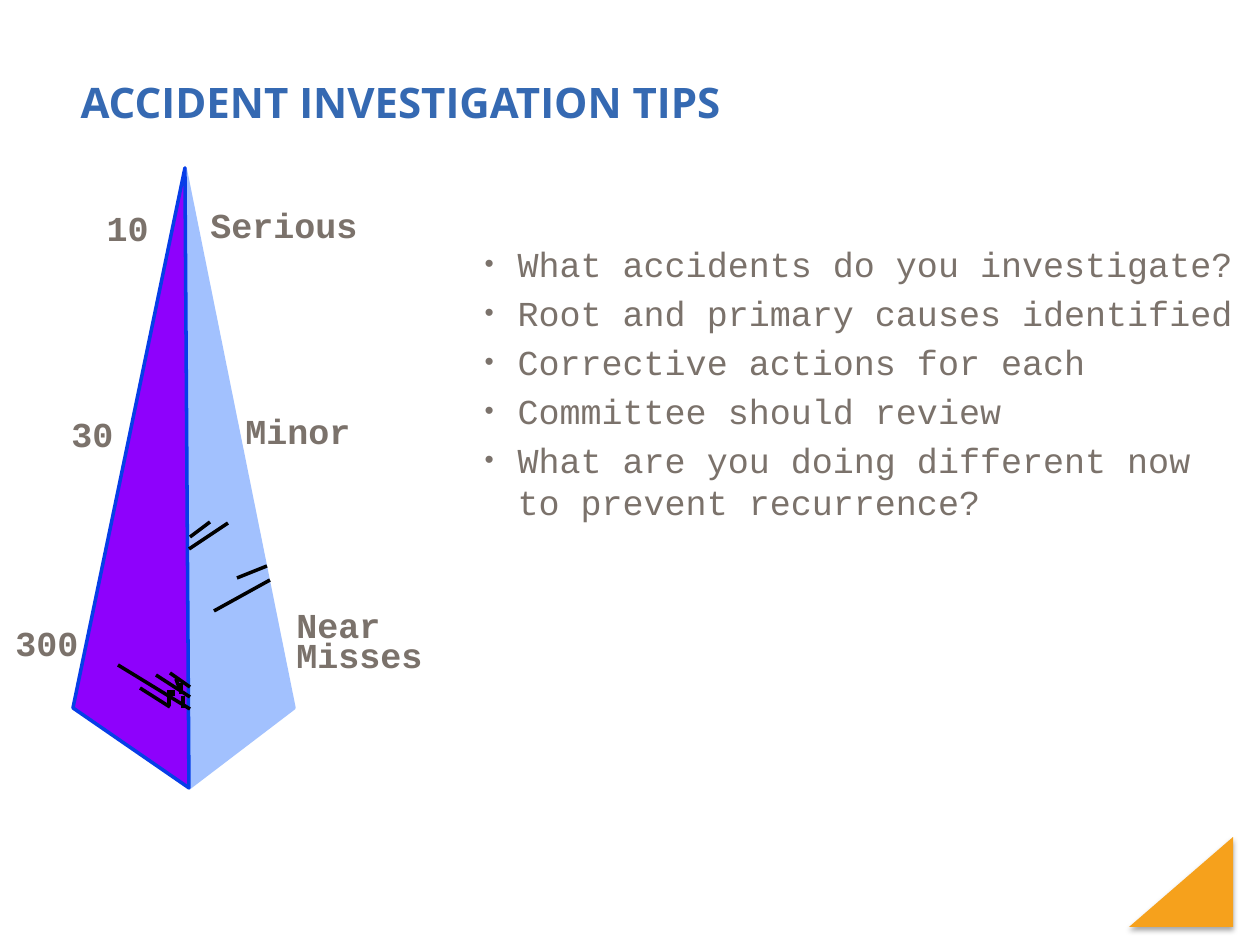
"""Build the accident investigation tips slide with its incident pyramid."""
from dataclasses import dataclass

from lxml import etree
from pptx import Presentation
from pptx.dml.color import RGBColor
from pptx.enum.shapes import MSO_CONNECTOR, MSO_SHAPE
from pptx.enum.text import MSO_ANCHOR, MSO_AUTO_SIZE, PP_ALIGN
from pptx.oxml.ns import qn
from pptx.util import Emu, Pt

EMU_PER_PX = 914400 / 126
BLUE = RGBColor(0x35, 0x69, 0xB2)
GRAY = RGBColor(0x7B, 0x72, 0x6B)
ORANGE = RGBColor(0xF6, 0xA1, 0x1C)
LIGHT_BLUE = RGBColor(0xA2, 0xC1, 0xFE)
PURPLE = RGBColor(0x8E, 0x01, 0xFC)
EDGE_BLUE = RGBColor(0x06, 0x3D, 0xE8)
BLACK = RGBColor(0, 0, 0)
LEFT, CENTER = PP_ALIGN.LEFT, PP_ALIGN.CENTER
TOP, MIDDLE = MSO_ANCHOR.TOP, MSO_ANCHOR.MIDDLE
NO_AUTOFIT = MSO_AUTO_SIZE.NONE
STRAIGHT = MSO_CONNECTOR.STRAIGHT
RIGHT_TRIANGLE = MSO_SHAPE.RIGHT_TRIANGLE
BULLET_INDENT = 33


@dataclass
class Label:
    text: str
    box: tuple[int, int, int, int]
    align: PP_ALIGN = LEFT
    wrap: bool = True
    line_spacing: float = 1.0


@dataclass
class Face:
    points: list[tuple[int, int]]
    fill: RGBColor
    outline: RGBColor


@dataclass
class Stroke:
    start: tuple[int, int]
    end: tuple[int, int]


APEX, BASE = (185, 168), (189, 788)
FACES = [
    Face([APEX, (294, 708), BASE], LIGHT_BLUE, LIGHT_BLUE),
    Face([APEX, BASE, (73, 708)], PURPLE, EDGE_BLUE),
]
STROKES = [
    Stroke((190, 709), (118, 665)),
    Stroke((190, 697), (156, 675)),
    Stroke((190, 687), (170, 673)),
    Stroke((180, 690), (176, 679)),
    Stroke((181, 694), (181, 683)),
    Stroke((183, 696), (183, 708)),
    Stroke((173, 690), (173, 696)),
    Stroke((169, 690), (169, 706)),
    Stroke((170, 707), (140, 688)),
    Stroke((189, 549), (228, 523)),
    Stroke((190, 537), (210, 522)),
    Stroke((267, 566), (237, 578)),
    Stroke((270, 580), (214, 611)),
]
LABELS = [
    Label("Serious", (198, 205, 253, 82), line_spacing=0.8),
    Label("Minor", (233, 413, 233, 78), line_spacing=0.75),
    Label("Near\nMisses", (284, 609, 241, 74), line_spacing=0.7),
    Label("10", (93, 200, 69, 54), CENTER, False),
    Label("30", (58, 406, 69, 54), CENTER, False),
    Label("300", (1, 615, 92, 54), CENTER, False),
]
TIPS = "\n".join([
    "What accidents do you investigate?",
    "Root and primary causes identified",
    "Corrective actions for each",
    "Committee should review",
    "What are you doing different now to prevent recurrence?",
])


def px(length: float) -> Emu:
    return Emu(round(length * EMU_PER_PX))


def place(shape, box: tuple[int, int, int, int]) -> None:
    shape.left, shape.top, shape.width, shape.height = map(px, box)


def add_bullet(paragraph) -> None:
    properties = paragraph._p.get_or_add_pPr()
    properties.set("marL", str(px(BULLET_INDENT)))
    properties.set("indent", str(-px(BULLET_INDENT)))
    color = etree.SubElement(properties, qn("a:buClr"))
    etree.SubElement(color, qn("a:srgbClr"), val=str(GRAY))
    etree.SubElement(properties, qn("a:buSzPct"), val="75000")
    etree.SubElement(properties, qn("a:buChar"), char="•")


def write_text(shape, text: str, *, size: int = 20, font: str = "Courier New",
               color: RGBColor = GRAY, bold: bool = False, align: PP_ALIGN = LEFT,
               anchor: MSO_ANCHOR = TOP, wrap: bool = True, line_spacing: float = 1.0,
               space_before: int = 0, bullet: bool = False) -> None:
    frame = shape.text_frame
    frame.text = text
    frame.auto_size = NO_AUTOFIT
    frame.word_wrap = wrap
    frame.vertical_anchor = anchor
    for index, paragraph in enumerate(frame.paragraphs):
        paragraph.alignment = align
        paragraph.line_spacing = line_spacing
        paragraph.space_before = Pt(space_before if index else 0)
        if bullet:
            add_bullet(paragraph)
        for run in paragraph.runs:
            run.font.size = Pt(size)
            run.font.name = font
            run.font.bold = bold
            run.font.color.rgb = color


def draw_corner(slide) -> None:
    triangle = slide.shapes.add_shape(RIGHT_TRIANGLE, *map(px, (1136, 830, 90, 104)))
    triangle.rotation = 270
    triangle.fill.solid()
    triangle.fill.fore_color.rgb = ORANGE
    triangle.line.fill.background()
    triangle.shadow.inherit = False
    effects = triangle._element.spPr.find(qn("a:effectLst"))
    shadow = etree.SubElement(effects, qn("a:outerShdw"), blurRad=str(Pt(3.1)),
                              dist=str(Pt(1.8)), dir="5400000", rotWithShape="0")
    color = etree.SubElement(shadow, qn("a:srgbClr"), val=str(BLACK))
    etree.SubElement(color, qn("a:alpha"), val="35000")


def draw_face(slide, face: Face) -> None:
    builder = slide.shapes.build_freeform(*face.points[0], scale=EMU_PER_PX)
    builder.add_line_segments(face.points[1:], close=True)
    shape = builder.convert_to_shape()
    shape.fill.solid()
    shape.fill.fore_color.rgb = face.fill
    shape.line.color.rgb = face.outline
    shape.line.width = Pt(2)
    shape.shadow.inherit = False


def draw_stroke(slide, stroke: Stroke) -> None:
    connector = slide.shapes.add_connector(STRAIGHT, *map(px, stroke.start + stroke.end))
    connector.line.color.rgb = BLACK
    connector.line.width = Pt(2)
    etree.SubElement(connector._element.spPr, qn("a:effectLst"))


def draw_label(slide, label: Label) -> None:
    shape = slide.shapes.add_textbox(*map(px, label.box))
    write_text(shape, label.text, bold=True, align=label.align, wrap=label.wrap,
               line_spacing=label.line_spacing)


def main() -> None:
    presentation = Presentation()
    presentation.slide_width, presentation.slide_height = px(1260), px(945)
    slide = presentation.slides.add_slide(presentation.slide_layouts[1])
    title, body = slide.placeholders
    place(title, (68, 23, 1148, 158))
    write_text(title, "ACCIDENT INVESTIGATION TIPS", size=24, font="Open Sans",
               color=BLUE, bold=True, anchor=MIDDLE)
    place(body, (472, 236, 778, 438))
    write_text(body, TIPS, space_before=4, bullet=True)
    draw_corner(slide)
    for face in FACES:
        draw_face(slide, face)
    for stroke in STROKES:
        draw_stroke(slide, stroke)
    for label in LABELS:
        draw_label(slide, label)
    presentation.save("out.pptx")


if __name__ == "__main__":
    main()
